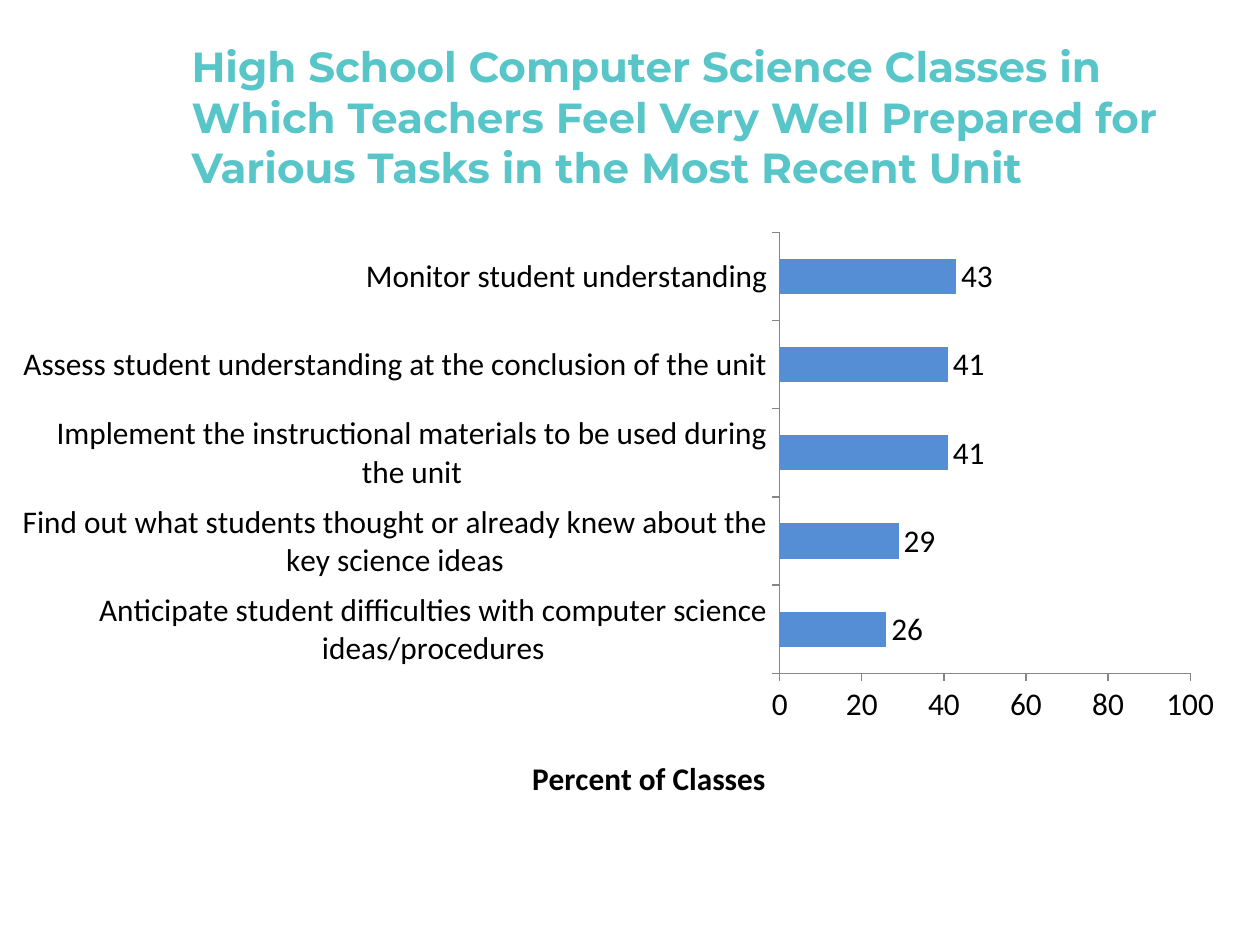
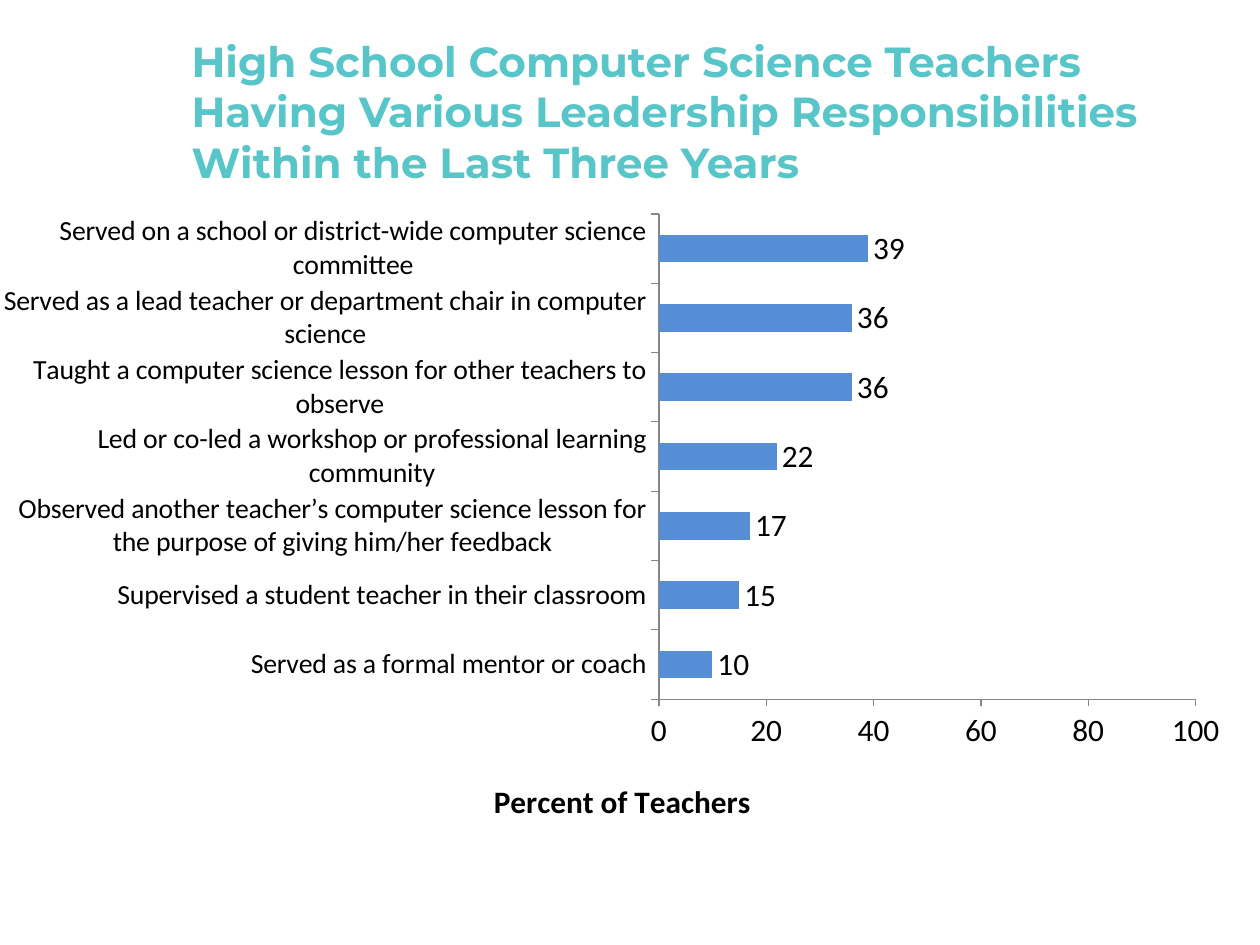
"""Build two slides of computer science teacher survey bar charts."""
import dataclasses

import lxml.etree
import pptx
import pptx.chart.data
import pptx.dml.color
import pptx.enum.chart
import pptx.enum.text
import pptx.oxml.ns
import pptx.util

Inches = pptx.util.Inches
Pt = pptx.util.Pt
qn = pptx.oxml.ns.qn


@dataclasses.dataclass(frozen=True)
class Theme:
    title_color: str = "58C5C9"
    bar_color: str = "558ED5"
    axis_color: str = "868686"
    text_color: str = "000000"
    title_font: str = "Montserrat"
    body_font: str = "Calibri"
    title_size: int = 24
    body_size: int = 18


def rgb(value):
    return pptx.dml.color.RGBColor.from_string(value)


def set_layout(parent, inner=False, **fractions):
    layout = parent.find(qn("c:layout"))
    if layout is None:
        layout = parent.makeelement(qn("c:layout"))
        parent.insert(0 if parent.find(qn("c:tx")) is None else 1, layout)
    manual = lxml.etree.SubElement(layout, qn("c:manualLayout"))
    settings = {"layoutTarget": "inner"} if inner else {}
    settings.update(xMode="edge", yMode="edge", **fractions)
    for tag, value in settings.items():
        lxml.etree.SubElement(manual, qn("c:" + tag)).set("val", str(value))


class Deck:
    def __init__(self, theme):
        self.theme = theme
        self.prs = pptx.Presentation()
        self.prs.slide_width = Inches(10)
        self.prs.slide_height = Inches(7.5)
        self.s = None

    def add_slide(self):
        self.s = self.prs.slides.add_slide(self.prs.slide_layouts[5])

    def style_font(self, font, size=None, bold=False):
        font.name = self.theme.body_font
        font.size = Pt(size or self.theme.body_size)
        font.bold = bold
        font.color.rgb = rgb(self.theme.text_color)

    def title(self, text, top, height):
        sp = self.s.shapes.title
        sp.left, sp.top = Inches(1.42), Inches(top)
        sp.width, sp.height = Inches(8.08), Inches(height)
        tf = sp.text_frame
        tf.text = text
        tf.word_wrap = True
        tf.auto_size = pptx.enum.text.MSO_AUTO_SIZE.NONE
        tf.vertical_anchor = pptx.enum.text.MSO_ANCHOR.MIDDLE
        p = tf.paragraphs[0]
        p.alignment = pptx.enum.text.PP_ALIGN.LEFT
        p.font.name = self.theme.title_font
        p.font.size = Pt(self.theme.title_size)
        p.font.bold = True
        p.font.color.rgb = rgb(self.theme.title_color)

    def axis(self, axis, size=None):
        axis.has_major_gridlines = False
        axis.major_tick_mark = pptx.enum.chart.XL_TICK_MARK.OUTSIDE
        axis.minor_tick_mark = pptx.enum.chart.XL_TICK_MARK.NONE
        axis.format.line.color.rgb = rgb(self.theme.axis_color)
        axis.format.line.width = Pt(0.75)
        self.style_font(axis.tick_labels.font, size)

    def bar_chart(self, values, box, plot, axis_title, title_at, label_size):
        data = pptx.chart.data.CategoryChartData()
        data.categories = list(values)[::-1]
        data.add_series("Series 1", list(values.values())[::-1])
        chart = self.s.shapes.add_chart(
            pptx.enum.chart.XL_CHART_TYPE.BAR_CLUSTERED,
            *map(Inches, box), data).chart
        chart.has_legend = False
        chart.has_title = False
        self.style_font(chart.font)

        bars = chart.plots[0]
        bars.gap_width = 150
        bars.vary_by_categories = False
        fill = bars.series[0].format.fill
        fill.solid()
        fill.fore_color.rgb = rgb(self.theme.bar_color)
        bars.has_data_labels = True
        bars.data_labels.show_value = True
        bars.data_labels.position = pptx.enum.chart.XL_LABEL_POSITION.OUTSIDE_END
        self.style_font(bars.data_labels.font)

        self.axis(chart.category_axis, label_size)
        scale = chart.value_axis
        self.axis(scale)
        scale.minimum_scale, scale.maximum_scale = 0, 100
        scale.major_unit = 20
        tf = scale.axis_title.text_frame
        tf.text = axis_title
        self.style_font(tf.paragraphs[0].font, bold=True)

        chart_xml = chart.element
        set_layout(next(chart_xml.iter(qn("c:plotArea"))), inner=True,
                   **dict(zip("xywh", plot)))
        set_layout(next(chart_xml.iter(qn("c:title"))),
                   **dict(zip("xy", title_at)))


def main():
    deck = Deck(Theme())

    deck.add_slide()
    deck.title("High School Computer Science Classes in Which Teachers Feel "
               "Very Well Prepared for Various Tasks in the Most Recent Unit",
               top=0.3, height=1.25)
    deck.bar_chart({
        "Monitor student understanding": 43,
        "Assess student understanding at the conclusion of the unit": 41,
        "Implement the instructional materials to be used during the unit": 41,
        "Find out what students thought or already knew about the key "
        "science ideas": 29,
        "Anticipate student difficulties with computer science "
        "ideas/procedures": 26,
    }, box=(0.18, 1.75, 9.65, 4.73), plot=(0.62, 0.02, 0.34, 0.74),
        axis_title="Percent of Classes", title_at=(0.41, 0.89), label_size=18)

    deck.add_slide()
    deck.title("High School Computer Science Teachers Having Various "
               "Leadership Responsibilities Within the Last Three Years",
               top=0.17, height=1.42)
    deck.bar_chart({
        "Served on a school or district-wide computer science committee": 39,
        "Served as a lead teacher or department chair in computer science": 36,
        "Taught a computer science lesson for other teachers to observe": 36,
        "Led or co-led a workshop or professional learning community": 22,
        "Observed another teacher’s computer science lesson for the purpose "
        "of giving him/her feedback": 17,
        "Supervised a student teacher in their classroom": 15,
        "Served as a formal mentor or coach": 10,
    }, box=(0.03, 1.6, 9.75, 4.99), plot=(0.53, 0.02, 0.44, 0.78),
        axis_title="Percent of Teachers", title_at=(0.39, 0.92), label_size=16)

    deck.prs.save("out.pptx")


if __name__ == "__main__":
    main()
